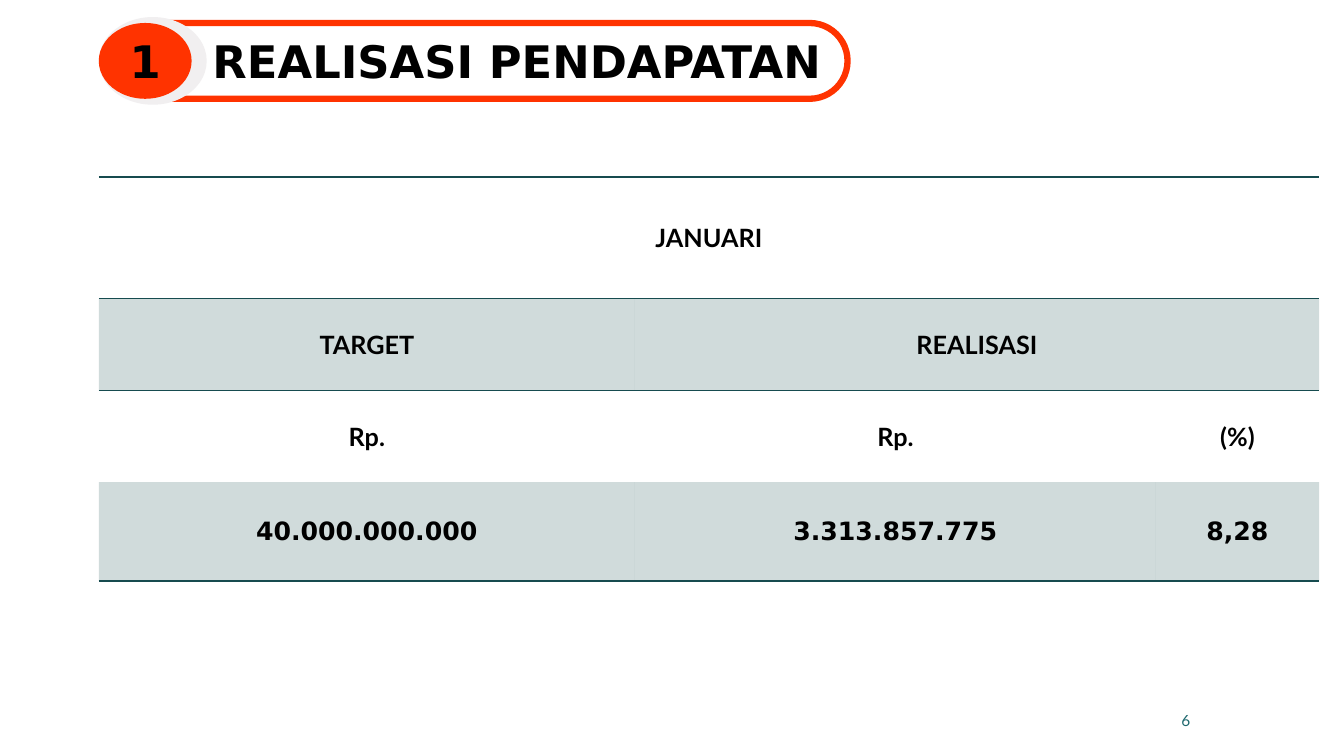
from dataclasses import dataclass

from lxml import etree
from pptx import Presentation
from pptx.dml.color import RGBColor
from pptx.enum.shapes import MSO_SHAPE
from pptx.enum.text import MSO_ANCHOR, MSO_AUTO_SIZE, PP_ALIGN
from pptx.oxml.ns import qn
from pptx.util import Cm, Pt

PILL, OVAL = MSO_SHAPE.ROUNDED_RECTANGLE, MSO_SHAPE.OVAL
CENTER, RIGHT = PP_ALIGN.CENTER, PP_ALIGN.RIGHT
MIDDLE, BOTTOM = MSO_ANCHOR.MIDDLE, MSO_ANCHOR.BOTTOM
NO_AUTOFIT = MSO_AUTO_SIZE.NONE
TITLE_ONLY = 5
PLAIN_TABLE = "{2D5ABB26-0587-4C30-8999-92F81FD0307C}"


@dataclass(frozen=True)
class Theme:
    ink: str = "000000"
    accent: str = "FF3300"
    halo: str = "F1EFF0"
    teal: str = "164B4F"
    number: str = "1F696F"
    heading_font: str = "DejaVu Sans"
    body_font: str = "Lato"
    heading_size: int = 32
    body_size: int = 18
    number_size: int = 11
    band_opacity: int = 20


THEME = Theme()


def write(frame, text, size=THEME.body_size, font=THEME.body_font, color=THEME.ink,
          bold=True, align=CENTER, anchor=MIDDLE, spacing=None):
    frame.word_wrap = True
    frame.vertical_anchor = anchor
    para = frame.paragraphs[0]
    para.alignment = align
    if spacing:
        para.line_spacing = spacing
    span = para.add_run()
    span.text = text
    span.font.size = Pt(size)
    span.font.name = font
    span.font.bold = bold
    span.font.color.rgb = RGBColor.from_string(color)


def add_oval(group, color, left, top, width, height):
    oval = group.shapes.add_shape(OVAL, Cm(left), Cm(top), Cm(width), Cm(height))
    oval.shadow.inherit = False
    oval.fill.solid()
    oval.fill.fore_color.rgb = RGBColor.from_string(color)
    oval.line.fill.background()
    return oval


def add_heading(page, number, text, left, top, width, height):
    group = page.shapes.add_group_shape()
    pill = group.shapes.add_shape(PILL, Cm(left + 0.3), Cm(top), Cm(width - 0.3), Cm(height))
    pill.adjustments[0] = 0.5
    pill.shadow.inherit = False
    pill.fill.background()
    pill.line.color.rgb = RGBColor.from_string(THEME.accent)
    pill.line.width = Pt(4.5)

    add_oval(group, THEME.halo, left, top - 0.15, 2.72, height + 0.3)
    badge = add_oval(group, THEME.accent, left, top, 2.34, height)
    write(badge.text_frame, number, size=THEME.heading_size, font=THEME.heading_font)

    title = page.shapes.title
    title.left, title.top = Cm(left - 0.38), Cm(top - 0.15)
    title.width, title.height = Cm(width + 2.97), Cm(height)
    title.text_frame.auto_size = NO_AUTOFIT
    write(title.text_frame, text, size=THEME.heading_size, font=THEME.heading_font,
          anchor=BOTTOM, spacing=0.9)


def add_border(cell, side):
    line = etree.SubElement(cell._tc.get_or_add_tcPr(), qn(f"a:{side}"), w=str(Pt(1)))
    fill = etree.SubElement(line, qn("a:solidFill"))
    etree.SubElement(fill, qn("a:srgbClr"), val=THEME.teal)


def fill_cell(cell, banded):
    if not banded:
        cell.fill.background()
        return
    cell.fill.solid()
    cell.fill.fore_color.rgb = RGBColor.from_string(THEME.teal)
    color = cell._tc.tcPr.find(f"{qn('a:solidFill')}/{qn('a:srgbClr')}")
    etree.SubElement(color, qn("a:alpha"), val=str(THEME.band_opacity * 1000))


def add_income_table(page, rows, left, top, widths, heights):
    frame = page.shapes.add_table(len(rows), len(widths), Cm(left), Cm(top),
                                  Cm(sum(widths)), Cm(sum(heights)))
    table = frame.table
    table.first_row = table.horz_banding = False
    table._tbl.tblPr.find(qn("a:tableStyleId")).text = PLAIN_TABLE
    for column, width in zip(table.columns, widths):
        column.width = Cm(width)

    last = len(rows) - 1
    borders = {0: ("lnT", "lnB"), 1: ("lnT",), last: ("lnB",)}
    for r, values in enumerate(rows):
        table.rows[r].height = Cm(heights[r])
        font = THEME.heading_font if r == last else THEME.body_font
        for c, value in enumerate(values):
            cell = table.cell(r, c)
            tight = r == last and c > 0
            cell.margin_left = cell.margin_right = Cm(0 if tight else 0.5)
            cell.margin_top = cell.margin_bottom = Cm(0 if tight else 0.2)
            cell.vertical_anchor = MIDDLE
            for side in borders.get(r, ()):
                add_border(cell, side)
            fill_cell(cell, banded=r % 2 == 1)
            if value:
                write_cell(cell, value, font)
    table.cell(0, 0).merge(table.cell(0, 2))
    table.cell(1, 1).merge(table.cell(1, 2))


def write_cell(cell, text, font):
    write(cell.text_frame, text, font=font)
    cell.vertical_anchor = MIDDLE
    body = cell.text_frame._txBody.bodyPr
    body.attrib.clear()


def add_page_number(page, text, left, top, width, height):
    box = page.shapes.add_textbox(Cm(left), Cm(top), Cm(width), Cm(height))
    write(box.text_frame, text, size=THEME.number_size, color=THEME.number,
          bold=False, align=RIGHT)


def main():
    deck = Presentation()
    deck.slide_width, deck.slide_height = Cm(33.87), Cm(19.05)
    page = deck.slides.add_slide(deck.slide_layouts[TITLE_ONLY])
    add_heading(page, "1", "REALISASI PENDAPATAN", 2.49, 0.58, 18.87, 1.91)
    rows = [
        ("JANUARI", "", ""),
        ("TARGET", "REALISASI", ""),
        ("Rp.", "Rp.", "(%)"),
        ("40.000.000.000", "3.313.857.775", "8,28"),
    ]
    add_income_table(page, rows, 2.49, 4.46, (13.51, 13.13, 4.11), (3.07, 2.31, 2.31, 2.49))
    add_page_number(page, "6", 22.35, 17.65, 7.9, 1.02)
    deck.save("out.pptx")


if __name__ == "__main__":
    main()
